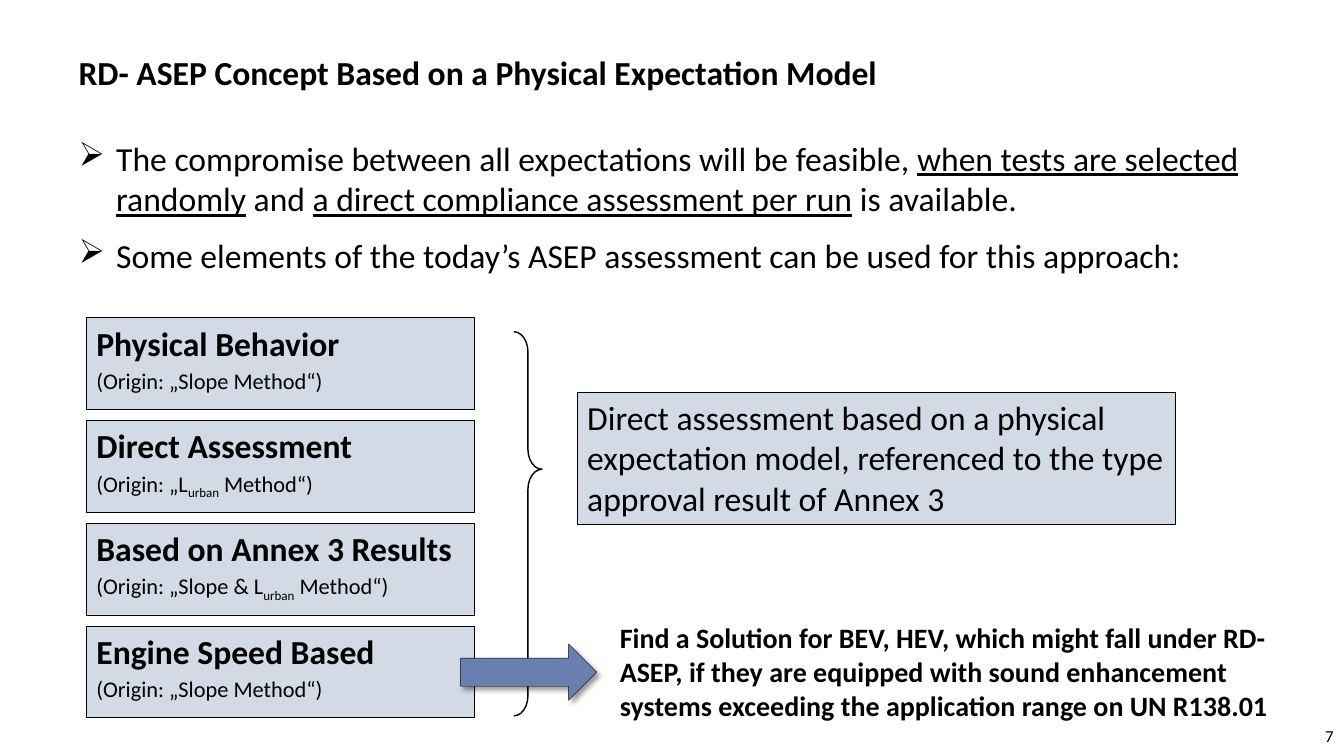
from lxml import etree
from pptx import Presentation
from pptx import util as u
from pptx.dml.color import RGBColor
from pptx.enum import shapes, text
from pptx.oxml import ns

# Content: a run is (text, style), style "" plain, "u" underlined, "sub" subscript
TITLE = "RD- ASEP Concept Based on a Physical Expectation Model"
BULLETS = [
    [("The compromise between all expectations will be feasible, ", ""),
     ("when tests are selected randomly", "u"),
     (" and ", ""),
     ("a direct compliance assessment per run", "u"),
     (" is available.", "")],
    [("Some elements of the today’s ASEP assessment can be used for this approach:", "")],
]
ELEMENTS = [
    ("Physical Behavior", [("(Origin: „Slope Method“)", "")]),
    ("Direct Assessment", [("(Origin: „L", ""), ("urban", "sub"), (" Method“)", "")]),
    ("Based on Annex 3 Results",
     [("(Origin: „Slope & L", ""), ("urban", "sub"), (" Method“)", "")]),
    ("Engine Speed Based", [("(Origin: „Slope Method“)", "")]),
]
RESULT = ("Direct assessment based on a physical expectation model, "
          "referenced to the type approval result of Annex 3")
TASK = ("Find a Solution for BEV, HEV, which might fall under RD-ASEP, if they are equipped "
        "with sound enhancement systems exceeding the application range on UN R138.01")
PAGE_NUMBER = "7"

# Look
FONT = "Calibri"
BLACK = RGBColor(0x00, 0x00, 0x00)
PALE_BLUE = RGBColor(0xD2, 0xDA, 0xE6)
ARROW_BLUE = RGBColor(0x69, 0x80, 0xAF)

# Layout in cm
MARGIN, CONTENT_WIDTH = 1.73, 30.4
ELEMENT_LEFT, ELEMENT_TOP, ELEMENT_WIDTH, ELEMENT_HEIGHT = 2.18, 8.0, 9.78, 2.31
ELEMENT_STEP = 2.59
BULLET_INDENT = 0.95

presentation = Presentation()
presentation.slide_width, presentation.slide_height = u.Cm(33.87), u.Cm(19.05)
slide = presentation.slides.add_slide(presentation.slide_layouts[6])


def write(frame, runs, size, bold=False, before=0, bullet=None, align=text.PP_ALIGN.LEFT):
    """Add one paragraph, using the empty first one if it is still free."""
    paragraph = frame.paragraphs[0] if not frame.text else frame.add_paragraph()
    paragraph.alignment = align
    paragraph.space_before = u.Pt(before)
    if bullet:
        properties = paragraph._p.get_or_add_pPr()
        properties.set("marL", str(u.Cm(BULLET_INDENT)))
        properties.set("indent", str(-u.Cm(BULLET_INDENT)))
        etree.SubElement(properties, ns.qn("a:buChar")).set("char", bullet)
    font = paragraph.font
    font.name, font.size, font.bold = FONT, u.Pt(size), bold
    font.color.rgb = BLACK
    for words, style in runs:
        run = paragraph.add_run()
        run.text = words
        if style == "u":
            run.font.underline = True
        elif style == "sub":
            run._r.get_or_add_rPr().set("baseline", "-25000")


def add_text(left, top, width, height, anchor=text.MSO_ANCHOR.TOP):
    frame = slide.shapes.add_textbox(*map(u.Cm, (left, top, width, height))).text_frame
    frame.word_wrap = True
    frame.vertical_anchor = anchor
    return frame


def add_shape(kind, left, top, width, height, fill=None, line=0.25, adjustments=()):
    shape = slide.shapes.add_shape(kind, *map(u.Cm, (left, top, width, height)))
    shape.shadow.inherit = False
    for index, value in enumerate(adjustments):
        shape.adjustments[index] = value
    if fill is None:
        shape.fill.background()
    else:
        shape.fill.solid()
        shape.fill.fore_color.rgb = fill
    shape.line.color.rgb = BLACK
    shape.line.width = u.Pt(line)
    return shape


def add_box(left, top, width, height):
    box = add_shape(shapes.MSO_SHAPE.ROUNDED_RECTANGLE, left, top, width, height,
                    PALE_BLUE, adjustments=[0])
    box.text_frame.word_wrap = True
    box.text_frame.vertical_anchor = text.MSO_ANCHOR.TOP
    return box.text_frame


def add_drop_shadow(shape):
    effects = shape._element.spPr.find(ns.qn("a:effectLst"))
    shadow = etree.SubElement(effects, ns.qn("a:outerShdw"), blurRad=str(u.Pt(4)),
                              dist=str(u.Pt(3)), dir="2700000", rotWithShape="0")
    color = etree.SubElement(shadow, ns.qn("a:srgbClr"), val=str(BLACK))
    etree.SubElement(color, ns.qn("a:alpha"), val="40000")


# Title and bullets
write(add_text(MARGIN, 1.19, CONTENT_WIDTH, 1.27), [(TITLE, "")], 24, bold=True)
bullet_frame = add_text(MARGIN, 3.35, CONTENT_WIDTH, 3.76)
for runs in BULLETS:
    write(bullet_frame, runs, 24, before=12, bullet="➢")

# Stack of elements
for row, (heading, origin) in enumerate(ELEMENTS):
    frame = add_box(ELEMENT_LEFT, ELEMENT_TOP + row * ELEMENT_STEP,
                    ELEMENT_WIDTH, ELEMENT_HEIGHT)
    write(frame, [(heading, "")], 24, bold=True, before=3)
    write(frame, origin, 16, before=3)

# Brace and result
add_shape(shapes.MSO_SHAPE.RIGHT_BRACE, 12.95, 8.36, 0.71, 9.68,
          line=1, adjustments=[0.71, 0.358])
write(add_box(14.55, 9.88, 15.06, 3.33), [(RESULT, "")], 24, before=3)

# Open task with its arrow
write(add_text(15.37, 15.52, 17.22, 2.82), [(TASK, "")], 20, bold=True)
add_drop_shadow(add_shape(shapes.MSO_SHAPE.RIGHT_ARROW, 11.61, 16.23, 3.43, 1.42, ARROW_BLUE))

# Page number
write(add_text(26.24, 18.03, 7.62, 1.02, text.MSO_ANCHOR.MIDDLE),
      [(PAGE_NUMBER, "")], 12, align=text.PP_ALIGN.RIGHT)

presentation.save("out.pptx")
